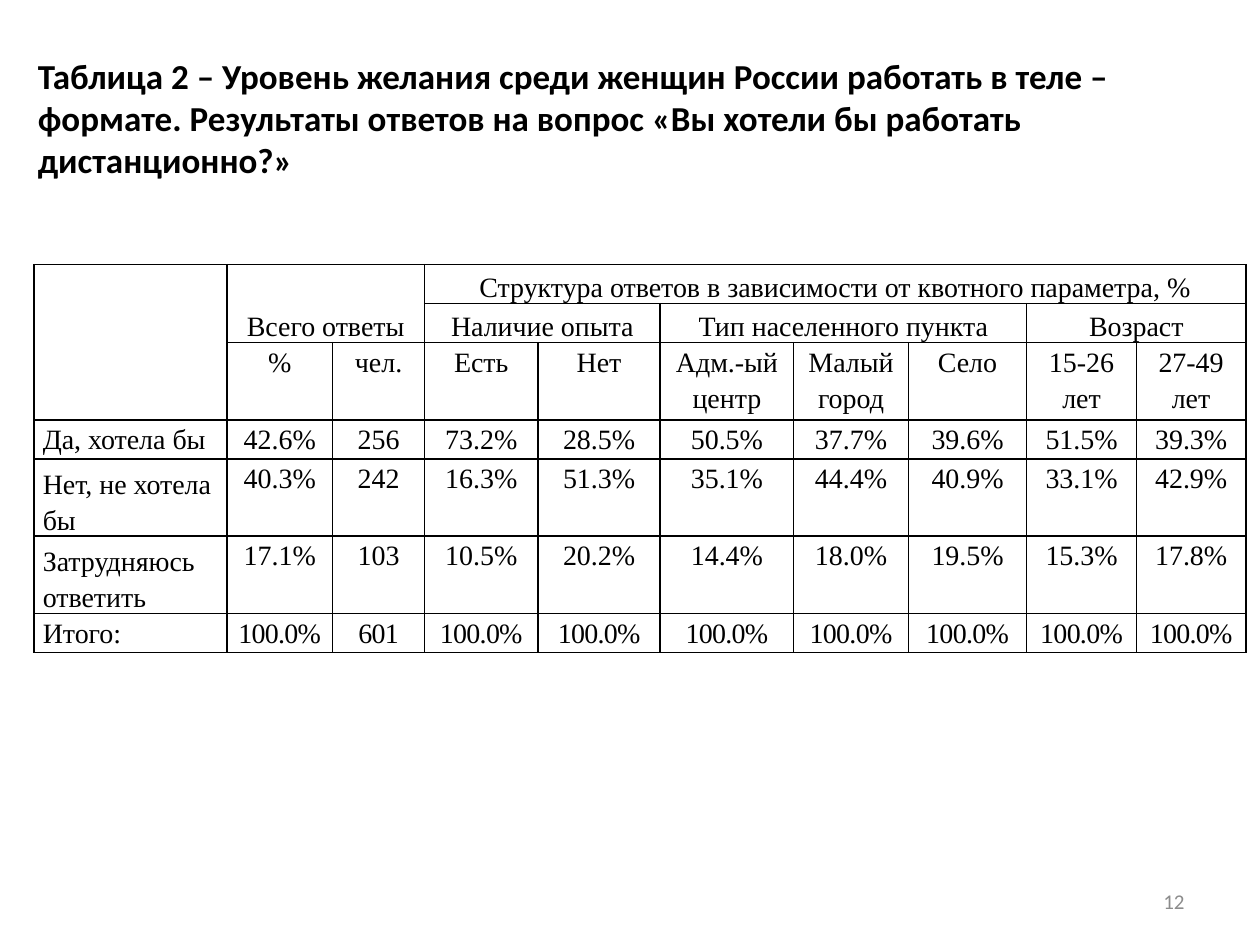
from pptx import Presentation
from pptx.dml.color import RGBColor
from pptx.enum.text import MSO_ANCHOR, MSO_AUTO_SIZE, PP_ALIGN
from pptx.oxml.ns import qn
from pptx.util import Inches, Pt
from lxml import etree

LEFT, MID, RIGHT = PP_ALIGN.LEFT, PP_ALIGN.CENTER, PP_ALIGN.RIGHT
TOP, CENTER, BOTTOM = MSO_ANCHOR.TOP, MSO_ANCHOR.MIDDLE, MSO_ANCHOR.BOTTOM
GROW = MSO_AUTO_SIZE.SHAPE_TO_FIT_TEXT
BLACK = RGBColor(0, 0, 0)
GREY = RGBColor(0x8C, 0x8C, 0x8C)
SANS, SERIF = "Calibri", "Times New Roman"

TITLE = ("Таблица 2 – Уровень желания среди женщин России работать в теле – "
         "формате. Результаты ответов на вопрос «Вы хотели бы работать дистанционно?»")
WIDTHS = [1.53, 0.84, 0.73, 0.9, 0.97, 1.06, 0.91, 0.94, 0.87, 0.87]
HEIGHTS = [0.31, 0.31, 0.61, 0.31, 0.61, 0.61, 0.31]
HEADS = {
    (0, 0, 2, 0): "",
    (0, 1, 1, 2): "Всего ответы",
    (0, 3, 0, 9): "Структура ответов в зависимости от квотного параметра, %",
    (1, 3, 1, 4): "Наличие опыта",
    (1, 5, 1, 7): "Тип населенного пункта",
    (1, 8, 1, 9): "Возраст",
}
ROWS = [
    ["", "%", "чел.", "Есть", "Нет", "Адм.-ый\nцентр", "Малый город", "Село",
     "15-26 лет", "27-49 лет"],
    ["Да, хотела бы", "42.6%", "256", "73.2%", "28.5%", "50.5%", "37.7%",
     "39.6%", "51.5%", "39.3%"],
    ["Нет, не хотела бы", "40.3%", "242", "16.3%", "51.3%", "35.1%", "44.4%",
     "40.9%", "33.1%", "42.9%"],
    ["Затрудняюсь ответить", "17.1%", "103", "10.5%", "20.2%", "14.4%", "18.0%",
     "19.5%", "15.3%", "17.8%"],
    ["Итого:", "100.0%", "601"] + ["100.0%"] * 7,
]


def put(frame, text, font=SERIF, size=16, color=BLACK, bold=False, align=MID,
        space=None, after=None, track=None):
    for i, line in enumerate(text.split("\n")):
        para = frame.add_paragraph() if i else frame.paragraphs[0]
        para.alignment = align
        para.line_spacing = space
        para.space_after = after
        run = para.add_run()
        run.text = line
        run.font.name = font
        run.font.size = Pt(size)
        run.font.bold = bold
        run.font.color.rgb = color
        if track:
            run._r.get_or_add_rPr().set("spc", str(track))


def edge(cell):
    props = cell._tc.get_or_add_tcPr()
    for i, side in enumerate(("lnL", "lnR", "lnT", "lnB")):
        line = etree.Element(qn(f"a:{side}"), w=str(Pt(1)))
        fill = etree.SubElement(line, qn("a:solidFill"))
        etree.SubElement(fill, qn("a:srgbClr"), val=str(BLACK))
        props.insert(i, line)


def title(slide, left, top, width, height):
    shape = slide.shapes.title
    shape.left, shape.top, shape.width, shape.height = left, top, width, height
    frame = shape.text_frame
    frame.word_wrap = True
    frame.auto_size = GROW
    frame.vertical_anchor = CENTER
    put(frame, TITLE, font=SANS, size=20, bold=True, align=LEFT)


def number(slide, left, top, width, height):
    frame = slide.shapes.add_textbox(left, top, width, height).text_frame
    frame.word_wrap = True
    frame.vertical_anchor = CENTER
    put(frame, "12", font=SANS, size=12, color=GREY, align=RIGHT)


def grid(slide, left, top, width, height):
    table = slide.shapes.add_table(
        len(HEIGHTS), len(WIDTHS), left, top, width, height).table
    table.first_row = table.horz_banding = False
    for col, size in zip(table.columns, WIDTHS):
        col.width = Inches(size)
    for row, size in zip(table.rows, HEIGHTS):
        row.height = Inches(size)
    for cell in table.iter_cells():
        cell.margin_left = cell.margin_right = Inches(0.07)
        cell.margin_top = cell.margin_bottom = 0
        cell.fill.background()
        edge(cell)
    for (r1, c1, r2, c2), text in HEADS.items():
        cell = table.cell(r1, c1)
        cell.merge(table.cell(r2, c2))
        cell.vertical_anchor = BOTTOM
        put(cell.text_frame, text, space=1.15)
    for r, row in enumerate(ROWS, 2):
        for c, text in enumerate(row):
            if not text:
                continue
            cell = table.cell(r, c)
            cell.vertical_anchor = BOTTOM if c == 0 and r in (4, 5) else TOP
            put(cell.text_frame, text, align=MID if c else LEFT, space=1.15,
                after=Pt(10) if r > 2 and c > 2 else None,
                track=-40 if r == 6 and c else None)


def main():
    deck = Presentation()
    deck.slide_width, deck.slide_height = Inches(10), Inches(7.5)
    slide = deck.slides.add_slide(deck.slide_layouts[5])
    number(slide, Inches(7.17), Inches(6.95), Inches(2.33), Inches(0.4))
    title(slide, Inches(0.2), Inches(0.38), Inches(9.45), Inches(1.11))
    grid(slide, Inches(0.27), Inches(2.1), Inches(9.61), Inches(3.07))
    deck.save("out.pptx")


if __name__ == "__main__":
    main()
